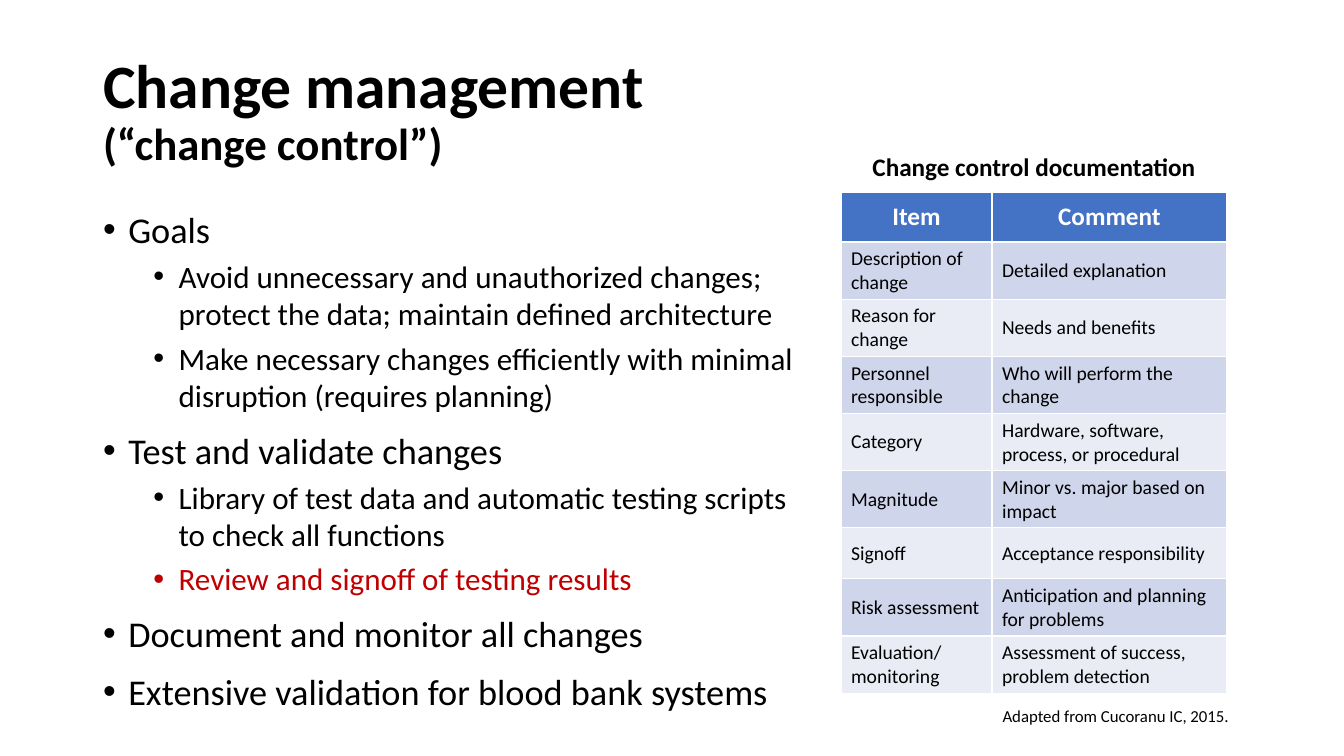
from lxml import etree
from pptx import Presentation
from pptx import util as u
from pptx.dml.color import RGBColor
from pptx.enum import text
from pptx.oxml.ns import qn

PX = 914400 / 100.8
COLORS = {
    "ink": "000000",
    "alert": "C00000",
    "header": "4472C4",
    "header_ink": "FFFFFF",
    "band_dark": "CFD5EA",
    "band_light": "E9EBF5",
}
GOALS = [
    (0, "Goals", "ink"),
    (1, "Avoid unnecessary and unauthorized changes; protect the data; maintain defined architecture", "ink"),
    (1, "Make necessary changes efficiently with minimal disruption (requires planning)", "ink"),
    (0, "Test and validate changes", "ink"),
    (1, "Library of test data and automatic testing scripts to check all functions", "ink"),
    (1, "Review and signoff of testing results", "alert"),
    (0, "Document and monitor all changes", "ink"),
    (0, "Extensive validation for blood bank systems", "ink"),
]
LEVELS = [(25.9, 10, 0.25), (22.2, 5, 0.75)]
DOCUMENTATION = [
    ("Item", "Comment"),
    ("Description of change", "Detailed explanation"),
    ("Reason for change", "Needs and benefits"),
    ("Personnel responsible", "Who will perform the change"),
    ("Category", "Hardware, software, process, or procedural"),
    ("Magnitude", "Minor vs. major based on impact"),
    ("Signoff", "Acceptance responsibility"),
    ("Risk assessment", "Anticipation and planning for problems"),
    ("Evaluation/ monitoring", "Assessment of success, problem detection"),
]
COLUMN_WIDTHS = [151, 235]
ROW_HEIGHTS = [50, 54, 54, 54, 54, 54, 51, 54, 54]


def px(length):
    return u.Emu(round(length * PX))


def place(shape, box):
    shape.left, shape.top, shape.width, shape.height = map(px, box)


def style(run, size, color="ink", bold=False):
    run.font.name = "Calibri"
    run.font.size = u.Pt(size)
    run.font.bold = bold
    run.font.color.rgb = RGBColor.from_string(COLORS[color])


def add_heading(slide, box):
    heading = slide.shapes.title
    place(heading, box)
    frame = heading.text_frame
    frame.text = "Change management\v(“change control”)"
    frame.auto_size = text.MSO_AUTO_SIZE.NONE
    frame.vertical_anchor = text.MSO_ANCHOR.MIDDLE
    paragraph = frame.paragraphs[0]
    paragraph.alignment = text.PP_ALIGN.LEFT
    paragraph.line_spacing = 0.9
    for run, size in zip(paragraph.runs, (44, 32)):
        style(run, size, bold=True)


def set_bullet(paragraph, indent):
    properties = paragraph._p.get_or_add_pPr()
    properties.set("marL", str(u.Inches(indent)))
    properties.set("indent", str(u.Inches(-0.25)))
    etree.SubElement(properties, qn("a:buFont"), typeface="Arial")
    etree.SubElement(properties, qn("a:buChar"), char="•")


def add_goals(slide, box):
    goals = slide.placeholders[1]
    place(goals, box)
    frame = goals.text_frame
    frame.text = "\n".join(line for _, line, _ in GOALS)
    frame.auto_size = text.MSO_AUTO_SIZE.NONE
    for paragraph, (level, _, color) in zip(frame.paragraphs, GOALS):
        size, space, indent = LEVELS[level]
        paragraph.level = level
        paragraph.space_before = u.Pt(space)
        set_bullet(paragraph, indent)
        style(paragraph.runs[0], size, color)


def add_label(slide, box, words, size, alignment, bold=False, wrap=True):
    label = slide.shapes.add_textbox(*map(px, box))
    frame = label.text_frame
    frame.text = words
    frame.word_wrap = wrap
    frame.auto_size = text.MSO_AUTO_SIZE.SHAPE_TO_FIT_TEXT
    frame.paragraphs[0].alignment = alignment
    style(frame.paragraphs[0].runs[0], size, bold=bold)


def fill_cell(cell, words, row):
    header = row == 0
    band = "header" if header else ("band_dark" if row % 2 else "band_light")
    cell.fill.solid()
    cell.fill.fore_color.rgb = RGBColor.from_string(COLORS[band])
    cell.vertical_anchor = text.MSO_ANCHOR.MIDDLE
    cell.text_frame.text = words
    paragraph = cell.text_frame.paragraphs[0]
    paragraph.alignment = text.PP_ALIGN.CENTER if header else text.PP_ALIGN.LEFT
    style(paragraph.runs[0], 18 if header else 14, "header_ink" if header else "ink", header)


def add_documentation(slide, box):
    left, top, width, height = box
    add_label(slide, (left + 20, top - 46, width - 40, 40), "Change control documentation",
              18, text.PP_ALIGN.CENTER, bold=True, wrap=False)
    documentation = slide.shapes.add_table(
        len(DOCUMENTATION), len(COLUMN_WIDTHS), *map(px, box)).table
    for column, column_width in zip(documentation.columns, COLUMN_WIDTHS):
        column.width = px(column_width)
    for row, (entries, row_height) in enumerate(zip(DOCUMENTATION, ROW_HEIGHTS)):
        documentation.rows[row].height = px(row_height)
        for column, words in enumerate(entries):
            fill_cell(documentation.cell(row, column), words, row)
    add_label(slide, (left + width - 249, top + height + 7, 261, 30),
              "Adapted from Cucoranu IC, 2015.", 12, text.PP_ALIGN.RIGHT)


def main():
    deck = Presentation()
    deck.slide_width, deck.slide_height = px(1344), px(756)
    slide = deck.slides.add_slide(deck.slide_layouts[1])
    add_heading(slide, (93, 40, 1159, 146))
    add_goals(slide, (93, 202, 730, 514))
    add_documentation(slide, (841, 192, 386, 502))
    deck.save("out.pptx")


if __name__ == "__main__":
    main()
